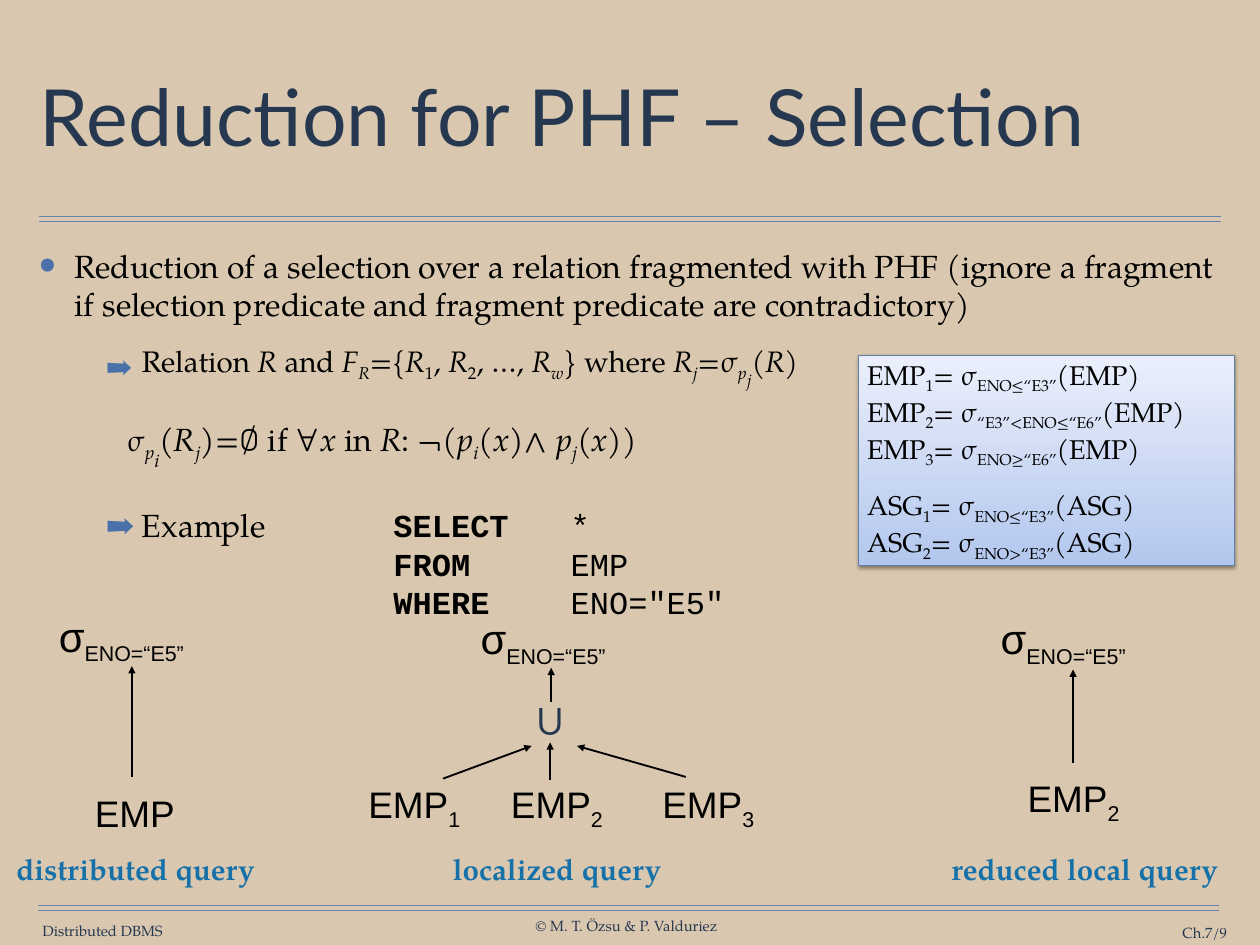
from dataclasses import dataclass

from lxml import etree
from pptx import Presentation
from pptx import util as u
from pptx.dml import color
from pptx.enum import shapes, text
from pptx.oxml import ns

ALIGN = text.PP_ALIGN
ANCHOR = text.MSO_ANCHOR


@dataclass(frozen=True)
class Theme:
    background: str = "D9C8AF"
    ink: str = "000000"
    navy: str = "263750"
    rule: str = "6682AA"
    bullet: str = "4A71A9"
    caption: str = "1771A9"
    panel_line: str = "627FA8"
    panel_bottom: str = "B3C7EE"
    panel_top: str = "EAEFFB"
    heading_font: str = "Lato"
    body_font: str = "TeX Gyre Pagella"
    tree_font: str = "Arial"
    code_font: str = "Courier New"
    title_size: int = 64
    body_size: int = 26
    detail_size: int = 24
    panel_size: int = 22
    operator_size: int = 34
    relation_size: int = 30
    union_size: int = 36
    footer_size: int = 12


def rgb(value):
    return color.RGBColor.from_string(value)


def add_xml(parent, tag, **attributes):
    child = etree.SubElement(parent, ns.qn(tag))
    for key, value in attributes.items():
        child.set(key, str(value))
    return child


class SlideBuilder:
    def __init__(self, slide, theme):
        self.slide = slide
        self.theme = theme
        slide.background.fill.solid()
        slide.background.fill.fore_color.rgb = rgb(theme.background)

    def add_runs(self, paragraph, pieces, size, font, ink):
        for content, marks, *own_size in pieces:
            for index, line in enumerate(content.split("\n")):
                if index:
                    paragraph.add_line_break()
                if not line:
                    continue
                run = paragraph.add_run()
                run.text = line
                run.font.size = u.Pt(own_size[0] if own_size else size)
                run.font.name = self.theme.code_font if "m" in marks else font
                run.font.color.rgb = rgb(ink)
                run.font.bold = "b" in marks
                run.font.italic = "i" in marks
                drop = 25 * marks.count("_")
                if drop:
                    run._r.get_or_add_rPr().set("baseline", str(-1000 * drop))

    def frame(self, shape, inset=(0.15, 0.15), anchor=ANCHOR.TOP, wrap=True):
        frame = shape.text_frame
        frame.auto_size = text.MSO_AUTO_SIZE.NONE if wrap else text.MSO_AUTO_SIZE.SHAPE_TO_FIT_TEXT
        frame.word_wrap = wrap
        frame.vertical_anchor = anchor
        frame.margin_left = frame.margin_right = u.Cm(inset[0])
        frame.margin_top = frame.margin_bottom = u.Cm(inset[1])
        return frame

    def place(self, shape, box):
        shape.left, shape.top, shape.width, shape.height = map(u.Cm, box)

    def title(self, heading, box):
        shape = self.slide.shapes.title
        self.place(shape, box)
        paragraph = self.frame(shape, anchor=ANCHOR.MIDDLE).paragraphs[0]
        paragraph.alignment = ALIGN.LEFT
        paragraph.line_spacing = 0.9
        self.add_runs(paragraph, [(heading, "")], self.theme.title_size,
                      self.theme.heading_font, self.theme.navy)

    def body(self, items, box):
        shape = self.slide.placeholders[1]
        self.place(shape, box)
        frame = self.frame(shape)
        for index, (level, margin, hang, before, after, bullet, tabs, size, pieces) in enumerate(items):
            paragraph = frame.add_paragraph() if index else frame.paragraphs[0]
            paragraph.level = level
            paragraph.line_spacing = 1.0
            paragraph.space_before = u.Pt(before)
            paragraph.space_after = u.Pt(after)
            properties = paragraph._p.get_or_add_pPr()
            properties.set("marL", str(u.Cm(margin)))
            properties.set("indent", str(-u.Cm(hang)))
            if bullet:
                character, percent = bullet
                tint = add_xml(properties, "a:buClr")
                add_xml(tint, "a:srgbClr", val=self.theme.bullet)
                add_xml(properties, "a:buSzPct", val=percent * 1000)
                add_xml(properties, "a:buChar", char=character)
            else:
                add_xml(properties, "a:buNone")
            if tabs:
                stops = add_xml(properties, "a:tabLst")
                for position in tabs:
                    add_xml(stops, "a:tab", pos=u.Cm(position), algn="l")
            self.add_runs(paragraph, pieces, size, self.theme.body_font, self.theme.ink)

    def label(self, pieces, box, size, font, ink, inset=(0.36, 0.18), align=ALIGN.CENTER,
              anchor=ANCHOR.TOP, spacing=None):
        shape = self.slide.shapes.add_textbox(*map(u.Cm, box))
        paragraph = self.frame(shape, inset, anchor, wrap=False).paragraphs[0]
        paragraph.alignment = align
        paragraph.line_spacing = spacing
        self.add_runs(paragraph, pieces, size, font, ink)

    def operator(self, left, top):
        self.label([("σ", "", self.theme.operator_size), ("ENO=“E5” ", "_")],
                   (left, top, 4.75, 1.8), self.theme.relation_size,
                   self.theme.tree_font, self.theme.ink)

    def relation(self, number, left, top, width=3.43):
        self.label([("EMP", ""), (number, "_")], (left, top, width, 1.63),
                   self.theme.relation_size, self.theme.tree_font, self.theme.ink)

    def caption(self, words, left, width):
        self.label([(words, "b")], (left, 24.26, width, 1.27), self.theme.detail_size,
                   self.theme.body_font, self.theme.caption, inset=(0.25, 0.13))

    def footer(self, words, left, top, width, align=ALIGN.CENTER):
        self.label([(words, "")], (left, top, width, 0.51), self.theme.footer_size,
                   self.theme.body_font, self.theme.navy, (0, 0), align, ANCHOR.MIDDLE)

    def line(self, start, end, ink, width, arrow=False):
        connector = self.slide.shapes.add_connector(
            shapes.MSO_CONNECTOR.STRAIGHT, *map(u.Cm, (*start, *end)))
        connector.line.color.rgb = rgb(ink)
        connector.line.width = u.Pt(width)
        if arrow:
            add_xml(connector.line._get_or_add_ln(), "a:tailEnd", type="triangle")
        add_xml(connector._element.spPr, "a:effectLst")

    def panel(self, groups, box):
        shape = self.slide.shapes.add_shape(shapes.MSO_SHAPE.RECTANGLE, *map(u.Cm, box))
        shape.fill.gradient()
        shape.fill.gradient_angle = 90
        for stop, tint in zip(shape.fill.gradient_stops,
                              (self.theme.panel_bottom, self.theme.panel_top)):
            stop.color.rgb = rgb(tint)
        shape.line.color.rgb = rgb(self.theme.panel_line)
        shape.line.width = u.Pt(0.75)
        effects = add_xml(shape._element.spPr, "a:effectLst")
        shadow = add_xml(effects, "a:outerShdw", blurRad=u.Pt(3.1), dist=u.Pt(1.6),
                         dir=90 * 60000, rotWithShape=0)
        add_xml(add_xml(shadow, "a:srgbClr", val=self.theme.ink), "a:alpha", val=38000)
        frame = self.frame(shape, (0.25, 0.13), ANCHOR.MIDDLE)
        for index, (name, predicates) in enumerate(groups):
            paragraph = frame.add_paragraph() if index else frame.paragraphs[0]
            paragraph.alignment = ALIGN.LEFT
            paragraph.space_before = u.Pt(16 * index)
            for number, predicate in enumerate(predicates, 1):
                lead = "\n" if number > 1 else ""
                self.add_runs(paragraph, [(lead + name, ""), (str(number), "_"), ("= σ", ""),
                                          (predicate, "_"), (f"({name})", "")],
                              self.theme.panel_size, self.theme.body_font, self.theme.ink)


def main():
    theme = Theme()
    deck = Presentation()
    deck.slide_width, deck.slide_height = u.Cm(36.12), u.Cm(27.1)
    page = SlideBuilder(deck.slides.add_slide(deck.slide_layouts[1]), theme)

    for left, right, top in ((1.12, 35, 6.2), (1.09, 34.95, 25.96)):
        for y in (top, top + 0.15):
            page.line((left, y), (right, y), theme.rule, 1)
    page.footer("Distributed DBMS", 1.19, 26.44, 3.51)
    page.footer("© M. T. Özsu & P. Valduriez", 15.32, 26.29, 5.28)
    page.footer("Ch.7/9", 31.27, 26.49, 3.91, ALIGN.RIGHT)

    page.title("Reduction for PHF – Selection", (0.99, 1.24, 34.14, 4.47))
    goal = [("Reduction of a selection over a relation fragmented with PHF (ignore a fragment "
             "if selection predicate and fragment predicate are contradictory)", "")]
    fragments = [("Relation ", ""), ("R ", "i"), ("and ", ""), ("F", "i"), ("R", "i_"), ("={", ""),
                 ("R", "i"), ("1", "_"), (", ", ""), ("R", "i"), ("2", "_"), (", …, ", ""),
                 ("R", "i"), ("w", "i_"), ("} where ", ""), ("R", "i"), ("j", "i_"), ("=σ", ""),
                 ("p", "i_"), ("j", "i__"), ("(", ""), ("R", "i"), (")", "")]
    rule = [("σ", "", theme.detail_size), ("p", "i_"), ("i", "i__"), ("(", ""), ("R", "i"),
            ("j", "i_"), (")=∅ if ∀", ""), ("x ", "i"), ("in ", ""), ("R", "i"), (": ¬(", ""),
            ("p", "i"), ("i", "i_"), ("(", ""), ("x", "i"), (")∧ ", ""), ("p", "i"), ("j", "i_"),
            ("(", ""), ("x", "i"), ("))", "")]
    query = [("Example\t", ""), ("SELECT", "bm"), ("\t", ""), ("*", "m"), ("\n\t", ""),
             ("FROM", "bm"), ("\t", ""), ("EMP", "m"), ("\n\t", ""),
             ("WHERE", "bm"), ("\t", ""), ('ENO="E5"', "m")]
    page.body([
        (0, 1.02, 1.02, 0, 0, ("•", 150), (), theme.body_size, goal),
        (1, 2.95, 1.02, 16, 0, ("➡", 85), (), theme.detail_size, fragments),
        (2, 2.52, 0, 24, 12, None, (), theme.body_size, rule),
        (1, 2.95, 1.02, 16, 0, ("➡", 85), (10.16, 15.24), theme.body_size, query),
    ], (0.97, 6.91, 34.14, 18.8))
    page.panel([("EMP", ("ENO≤“E3”", "“E3”<ENO≤“E6”", "ENO≥“E6”")),
                ("ASG", ("ENO≤“E3”", "ENO>“E3”"))], (24.61, 10.19, 10.77, 6.02))

    for left, top in ((1.19, 17.32), (13.28, 17.4), (28.19, 17.4)):
        page.operator(left, top)
    page.label([("∪", "")], (15.29, 19.89, 0.99, 1.47), theme.union_size, theme.tree_font,
               theme.navy, inset=(0, 0), spacing=u.Pt(41.2))
    page.relation("", 2.34, 22.48, 3.05)
    for number, left, top in (("1", 10.16, 22.23), ("2", 14.25, 22.23), ("3", 18.59, 22.23),
                              ("2", 29.06, 22.07)):
        page.relation(number, left, top)
    for start, end in (((3.78, 22.28), (3.78, 19.1)), ((15.8, 20.14), (15.8, 19.15)),
                       ((12.7, 22.33), (15.24, 21.39)), ((15.77, 22.38), (15.77, 21.29)),
                       ((19.66, 22.28), (16.54, 21.39)), ((30.76, 21.87), (30.76, 19.2))):
        page.line(start, end, theme.ink, 1.5, arrow=True)
    for words, left, width in (("distributed query", 0.2, 7.37), ("localized query", 12.7, 6.53),
                               ("reduced local query", 26.85, 8.48)):
        page.caption(words, left, width)
    deck.save("out.pptx")


if __name__ == "__main__":
    main()
